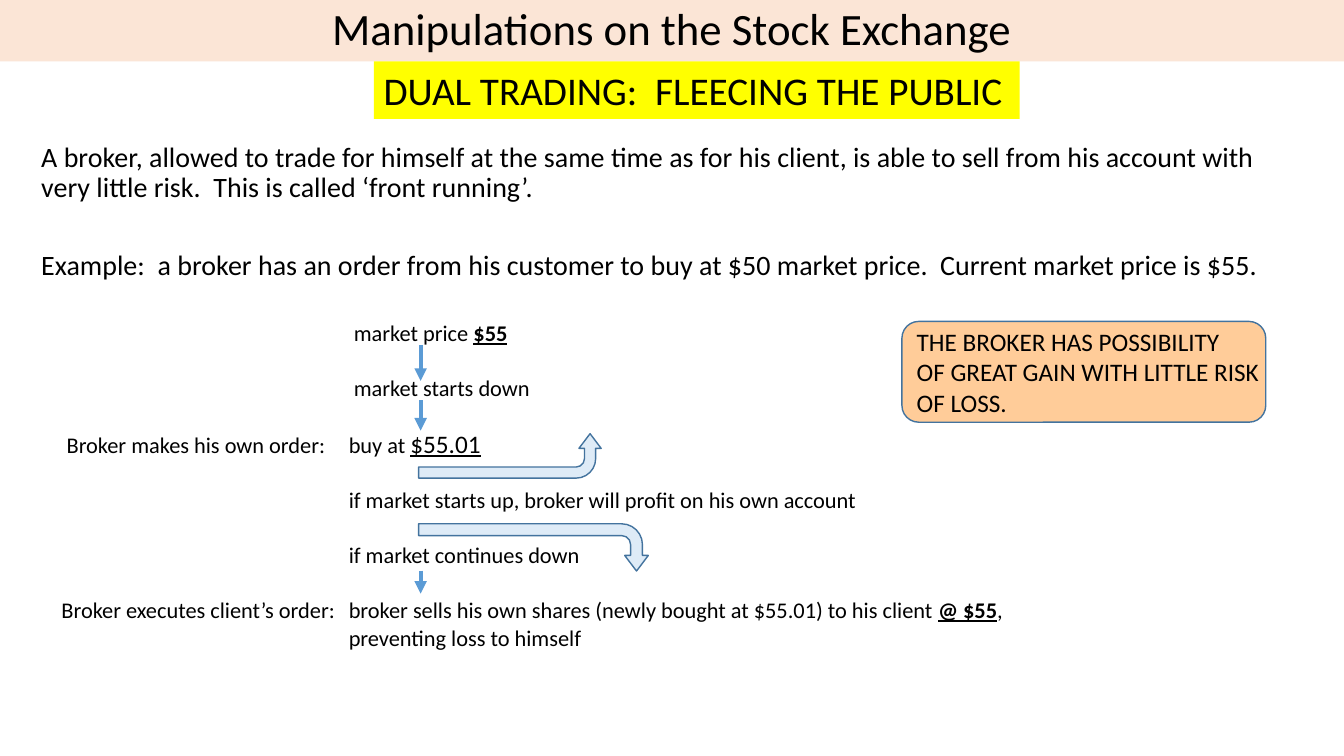
from dataclasses import dataclass

from pptx import Presentation
from pptx.dml.color import RGBColor
from pptx.enum import shapes, text
from pptx.oxml.ns import qn
from pptx.util import Cm, Pt


@dataclass(frozen=True)
class Theme:
    font: str = "Calibri"
    ink: str = "000000"
    title_band: str = "FBE5D6"
    highlight: str = "FFFF00"
    callout: str = "FFCC99"
    outline: str = "43739E"
    arrow: str = "5B9BD5"
    bent_arrow: str = "DEEBF7"
    title_size: int = 32
    banner_size: int = 28
    body_size: int = 20
    callout_size: int = 18
    step_size: int = 16


THEME = Theme()
STEP_INDENT = 7.75
PRICE_INDENT = 7.88
STEP_GAP = 29.75


def color(value):
    return RGBColor.from_string(value)


def box(left, top, width, height):
    return Cm(left), Cm(top), Cm(width), Cm(height)


def add_run(paragraph, words, size, bold=False, underline=False):
    run = paragraph.add_run()
    run.text = words
    run.font.name = THEME.font
    run.font.size = Pt(size)
    run.font.color.rgb = color(THEME.ink)
    if bold:
        run.font.bold = True
    if underline:
        run.font.underline = True


def next_paragraph(frame):
    first = frame.paragraphs[0]
    return frame.add_paragraph() if first.runs else first


def add_paragraph(frame, runs, spacing, before, indent=0, tabs=()):
    paragraph = next_paragraph(frame)
    paragraph.line_spacing = spacing
    paragraph.space_before = Pt(before)
    for run in runs:
        add_run(paragraph, *run)
    properties = paragraph._p.get_or_add_pPr()
    if indent:
        properties.set("marL", str(Cm(indent)))
    if tabs:
        tab_list = properties.makeelement(qn("a:tabLst"), {})
        for position in tabs:
            tab = tab_list.makeelement(qn("a:tab"), {"pos": str(Cm(position)), "algn": "l"})
            tab_list.append(tab)
        properties.append(tab_list)


def add_filled_shape(slide, kind, area, fill, outline=None):
    shape = slide.shapes.add_shape(kind, *box(*area))
    shape.shadow.inherit = False
    shape.fill.solid()
    shape.fill.fore_color.rgb = color(fill)
    if outline:
        shape.line.color.rgb = color(outline)
        shape.line.width = Pt(1)
    else:
        shape.line.fill.background()
    return shape


def add_label(slide, kind, area, fill, lines, size, outline=None):
    shape = add_filled_shape(slide, kind, area, fill, outline)
    frame = shape.text_frame
    frame.word_wrap = False
    frame.vertical_anchor = text.MSO_ANCHOR.MIDDLE
    for line in lines:
        paragraph = next_paragraph(frame)
        paragraph.alignment = text.PP_ALIGN.LEFT
        add_run(paragraph, line, size)


def add_down_arrow(slide, x, top, bottom):
    connector = slide.shapes.add_connector(
        shapes.MSO_CONNECTOR.STRAIGHT, Cm(x), Cm(top), Cm(x), Cm(bottom))
    connector.line.color.rgb = color(THEME.arrow)
    connector.line.width = Pt(3)
    line = connector.line._get_or_add_ln()
    line.append(line.makeelement(qn("a:tailEnd"), {"type": "triangle"}))
    properties = connector.element.spPr
    properties.append(properties.makeelement(qn("a:effectLst"), {}))


def add_bent_arrow(slide, area, flips):
    shape = add_filled_shape(
        slide, shapes.MSO_SHAPE.BENT_ARROW, area, THEME.bent_arrow, THEME.outline)
    shape.rotation = 270
    for index, value in enumerate((0.25, 0.25, 0.33, 0.44)):
        shape.adjustments[index] = value
    frame = shape.element.spPr.find(qn("a:xfrm"))
    for flip in flips:
        frame.set(flip, "1")


def format_title(slide, words):
    title = slide.shapes.title
    title.left, title.top, title.width, title.height = box(0, 0, 33.87, 1.55)
    title.fill.solid()
    title.fill.fore_color.rgb = color(THEME.title_band)
    frame = title.text_frame
    frame.auto_size = text.MSO_AUTO_SIZE.NONE
    frame.vertical_anchor = text.MSO_ANCHOR.MIDDLE
    paragraph = frame.paragraphs[0]
    paragraph.alignment = text.PP_ALIGN.CENTER
    paragraph.line_spacing = 0.9
    add_run(paragraph, words, THEME.title_size)


def add_explanation(slide):
    frame = slide.shapes.add_textbox(*box(0.79, 3.48, 32.31, 13.51)).text_frame
    frame.word_wrap = True
    body, step = THEME.body_size, THEME.step_size
    add_paragraph(frame, [(
        "A broker, allowed to trade for himself at the same time as for his client, "
        "is able to sell from his account with very little risk.  "
        "This is called ‘front running’.", body)], 0.9, 10)
    add_paragraph(frame, [(
        "Example:  a broker has an order from his customer to buy at $50 market price.  "
        "Current market price is $55.", body)], 0.5, 42)
    steps = [
        ([("market price ", step), ("$55", step, True, True)], 37, PRICE_INDENT, ()),
        ([("market starts down", step)], STEP_GAP, PRICE_INDENT, ()),
        ([("\tBroker makes his own order:\tbuy at ", step),
          ("$55.01", THEME.callout_size, False, True)], STEP_GAP, 0, (0.64, STEP_INDENT)),
        ([("if market starts up, broker will profit on his own account", step)],
         STEP_GAP, STEP_INDENT, ()),
        ([("if market continues down", step)], STEP_GAP, STEP_INDENT, ()),
        ([("\tBroker executes client’s order:\tbroker sells his own shares "
           "(newly bought at $55.01) to his client ", step),
          ("@ $55", step, True, True), (",", step)], STEP_GAP, 0, (0.51, STEP_INDENT)),
        ([("preventing loss to himself", step)], 10, STEP_INDENT, ()),
    ]
    for runs, before, indent, tabs in steps:
        add_paragraph(frame, runs, 0.5, before, indent, tabs)


def main():
    presentation = Presentation()
    presentation.slide_width, presentation.slide_height = Cm(33.87), Cm(19.05)
    slide = presentation.slides.add_slide(presentation.slide_layouts[5])
    format_title(slide, "Manipulations on the Stock Exchange")
    add_explanation(slide)
    add_label(slide, shapes.MSO_SHAPE.RECTANGLE, (9.42, 1.55, 16.28, 1.45),
              THEME.highlight, ["DUAL TRADING:  FLEECING THE PUBLIC"], THEME.banner_size)
    add_label(slide, shapes.MSO_SHAPE.ROUNDED_RECTANGLE, (22.73, 8.1, 9.17, 2.54),
              THEME.callout,
              ["THE BROKER HAS POSSIBILITY", "OF GREAT GAIN WITH LITTLE RISK", "OF LOSS."],
              THEME.callout_size, THEME.outline)
    for top, bottom in ((8.69, 9.6), (10.08, 10.85), (14.38, 14.96)):
        add_down_arrow(slide, 10.6, top, bottom)
    add_bent_arrow(slide, (12.29, 9.19, 1.12, 4.6), ["flipV"])
    add_bent_arrow(slide, (12.85, 10.9, 1.19, 5.79), ["flipH", "flipV"])
    presentation.save("out.pptx")


if __name__ == "__main__":
    main()
